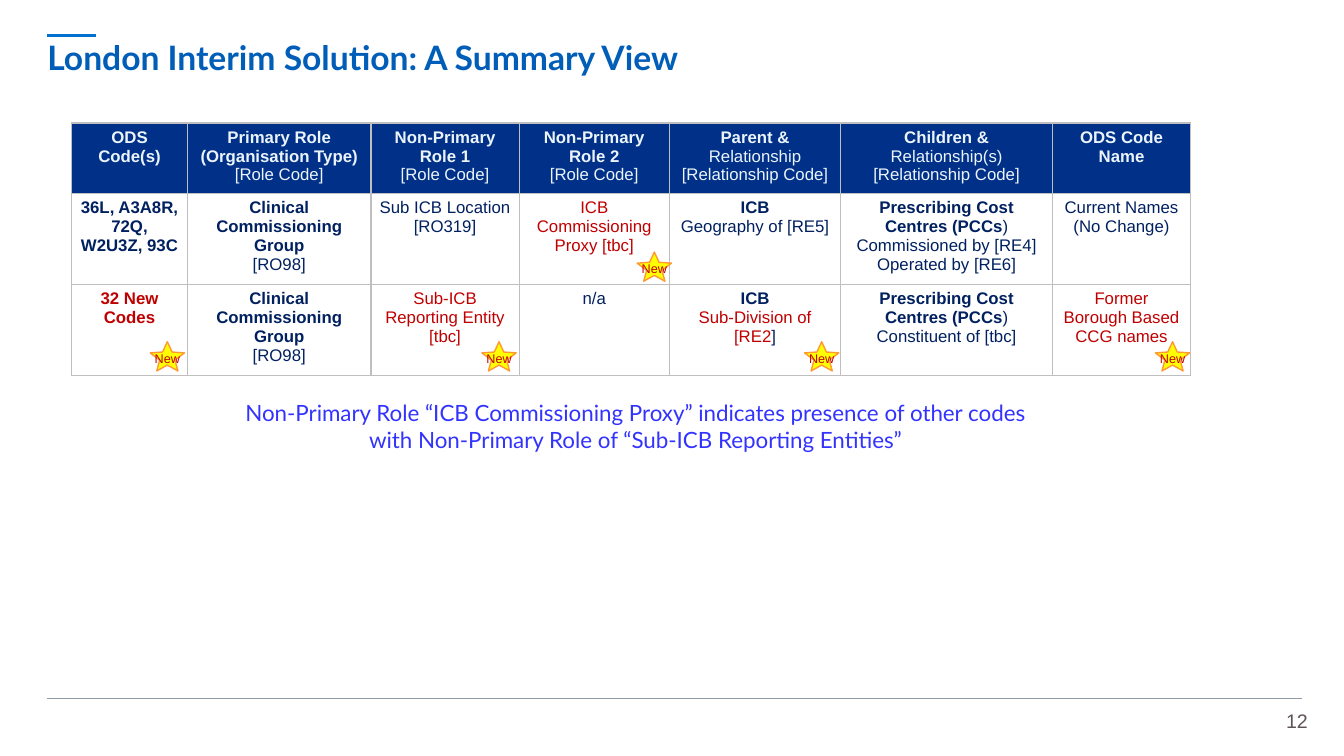
from itertools import accumulate

from lxml.etree import SubElement
from pptx import Presentation
from pptx.dml.color import RGBColor
from pptx.enum.shapes import MSO_CONNECTOR, MSO_SHAPE
from pptx.enum.text import MSO_ANCHOR, PP_ALIGN
from pptx.oxml.ns import qn
from pptx.util import Inches, Pt

WIDTH, HEIGHT = 13.33, 7.5
MARGIN = 0.47
NAVY, HEADER_TEXT, RED = "002060", "EBF4FB", "C00000"
HEADER_FILL, BODY_FILL, BORDER = "003087", "FFFFFF", "BFBFBF"

TITLE = "London Interim Solution: A Summary View"
NOTE = ("Non-Primary Role “ICB Commissioning Proxy” indicates presence of other codes "
        "with Non-Primary Role of “Sub-ICB Reporting Entities”")
PAGE_NUMBER = "12"

# A cell is a list of paragraphs, a paragraph a list of (text, format) runs.
PLAIN, BOLD = {}, {"bold": True}
ALERT, BOLD_ALERT = {"color": RED}, {"color": RED, "bold": True}
CCG = [[("Clinical Commissioning Group", BOLD)], [("[RO98]", PLAIN)]]
PCC = [("Prescribing Cost Centres (PCCs", BOLD), (")", PLAIN)]
ROLE_CODE = [("[Role Code]", PLAIN)]
RELATIONSHIP_CODE = [("[Relationship Code]", PLAIN)]
ROWS = [
    [
        [[("ODS Code(s)", BOLD)]],
        [[("Primary Role", BOLD)], [("(Organisation Type)", BOLD)], ROLE_CODE],
        [[("Non-Primary Role 1", BOLD)], ROLE_CODE],
        [[("Non-Primary Role 2", BOLD)], ROLE_CODE],
        [[("Parent & ", BOLD), ("Relationship", PLAIN)], RELATIONSHIP_CODE],
        [[("Children & ", BOLD), ("Relationship(s)", PLAIN)], RELATIONSHIP_CODE],
        [[("ODS Code Name", BOLD)]],
    ],
    [
        [[("36L, A3A8R, 72Q, W2U3Z, 93C", BOLD)]],
        CCG,
        [[("Sub ICB Location [RO319]", PLAIN)]],
        [[("ICB Commissioning Proxy [tbc]", ALERT)]],
        [[("ICB", BOLD)], [("Geography of [RE5]", PLAIN)]],
        [PCC, [("Commissioned by [RE4]", PLAIN)], [("Operated by [RE6]", PLAIN)]],
        [[("Current Names (No Change)", PLAIN)]],
    ],
    [
        [[("32 New Codes", BOLD_ALERT)]],
        CCG,
        [[("Sub-ICB Reporting Entity [tbc]", ALERT)]],
        [[("n/a", PLAIN)]],
        [[("ICB", BOLD)], [("Sub-Division of [RE2", ALERT), ("]", PLAIN)]],
        [PCC, [("Constituent of [tbc]", PLAIN)]],
        [[("Former Borough Based CCG names", ALERT)]],
    ],
]
TABLE_LEFT, TABLE_TOP = 0.71, 1.22
COLUMN_WIDTHS = [1.15, 1.82, 1.47, 1.49, 1.7, 2.1, 1.37]
ROW_HEIGHTS = [0.66, 0.85, 0.85]

# Row, column, and distance of the star's right edge from the column's right edge.
NEW_CELLS = [(1, 3, -0.02), (2, 2, 0.03), (2, 0, 0.03), (2, 4, 0.02), (2, 6, 0.01)]
STAR_WIDTH, STAR_HEIGHT = 0.34, 0.29
STAR_RISE = {1: 0.23, 2: 0.19}


def rgb(value):
    return RGBColor.from_string(value)


def place(shape, left, top, width, height):
    shape.left, shape.top = Inches(left), Inches(top)
    shape.width, shape.height = Inches(width), Inches(height)


def add_span(para, text, size=12, color=NAVY, font="Arial", bold=False):
    span = para.add_run()
    span.text = text
    span.font.size, span.font.name, span.font.bold = Pt(size), font, bold
    span.font.color.rgb = rgb(color)


def write(frame, text, align=PP_ALIGN.CENTER, anchor=MSO_ANCHOR.TOP, inset=None,
          wrap=True, **style):
    """Put one formatted paragraph into a text frame."""
    frame.word_wrap, frame.vertical_anchor = wrap, anchor
    if inset is not None:
        frame.margin_left = frame.margin_right = Inches(inset)
        frame.margin_top = frame.margin_bottom = Inches(inset)
    para = frame.paragraphs[0]
    para.alignment = align
    add_span(para, text, **style)
    return para


def add_rule(slide, left, right, top, color, weight):
    line = slide.shapes.add_connector(MSO_CONNECTOR.STRAIGHT, Inches(left), Inches(top),
                                      Inches(right), Inches(top))
    line.line.color.rgb, line.line.width = rgb(color), Pt(weight)
    SubElement(line._element.spPr, qn("a:effectLst"))


def add_borders(cell):
    properties = cell._tc.get_or_add_tcPr()
    for side in ("a:lnL", "a:lnR", "a:lnT", "a:lnB"):
        line = SubElement(properties, qn(side), w=str(Pt(1)))
        SubElement(SubElement(line, qn("a:solidFill")), qn("a:srgbClr"), val=BORDER)


def fill_cell(cell, paragraphs, fill, color, side_inset):
    cell.margin_left = cell.margin_right = Inches(side_inset)
    add_borders(cell)
    cell.fill.solid()
    cell.fill.fore_color.rgb = rgb(fill)
    frame = cell.text_frame
    for index, runs in enumerate(paragraphs):
        para = frame.add_paragraph() if index else frame.paragraphs[0]
        para.alignment = PP_ALIGN.CENTER
        for text, style in runs:
            add_span(para, text, **{"color": color, **style})


def add_role_table(slide):
    table = slide.shapes.add_table(
        len(ROWS), len(COLUMN_WIDTHS), Inches(TABLE_LEFT), Inches(TABLE_TOP),
        Inches(sum(COLUMN_WIDTHS)), Inches(sum(ROW_HEIGHTS))).table
    table.horz_banding = False
    for column, width in zip(table.columns, COLUMN_WIDTHS):
        column.width = Inches(width)
    for row, height in zip(table.rows, ROW_HEIGHTS):
        row.height = Inches(height)
    last = len(COLUMN_WIDTHS) - 1
    for r, cells in enumerate(ROWS):
        for c, paragraphs in enumerate(cells):
            if r:
                fill_cell(table.cell(r, c), paragraphs, BODY_FILL, NAVY, 0.08)
            else:
                fill_cell(table.cell(r, c), paragraphs, HEADER_FILL, HEADER_TEXT,
                          0.04 if c == last else 0.1)


def add_new_stars(slide):
    right_edges = [TABLE_LEFT + offset for offset in accumulate(COLUMN_WIDTHS)]
    bottom_edges = [TABLE_TOP + offset for offset in accumulate(ROW_HEIGHTS)]
    for row, column, gap in NEW_CELLS:
        star = slide.shapes.add_shape(MSO_SHAPE.STAR_5_POINT, 0, 0, 0, 0)
        place(star, right_edges[column] - gap - STAR_WIDTH,
              bottom_edges[row] - STAR_RISE[row], STAR_WIDTH, STAR_HEIGHT)
        star.adjustments[0] = 0.224
        star.shadow.inherit = False
        star.fill.solid()
        star.fill.fore_color.rgb = rgb("FFFF00")
        star.line.color.rgb, star.line.width = rgb("FF9933"), Pt(1)
        write(star.text_frame, "New", anchor=MSO_ANCHOR.MIDDLE, inset=0, wrap=False,
              size=9, color=RED)


def add_text(slide, text, left, top, width, height, **style):
    box = slide.shapes.add_textbox(0, 0, 0, 0)
    place(box, left, top, width, height)
    write(box.text_frame, text, **style)


def main():
    deck = Presentation()
    deck.slide_width, deck.slide_height = Inches(WIDTH), Inches(HEIGHT)
    slide = deck.slides.add_slide(deck.slide_layouts.get_by_name("Title Only"))

    add_rule(slide, MARGIN, 0.95, 0.35, "0072CE", 2)
    add_rule(slide, MARGIN, 12.91, 6.93, "919EA8", 0.5)
    title = slide.shapes.title
    place(title, MARGIN, 0.35, 12.47, 0.49)
    para = write(title.text_frame, TITLE, align=PP_ALIGN.LEFT, anchor=MSO_ANCHOR.MIDDLE,
                 inset=0, size=24, color="005EB8", font="Lato", bold=True)
    para.line_spacing = 0.9
    add_text(slide, PAGE_NUMBER, 12.63, 6.95, 0.44, 0.4, align=PP_ALIGN.RIGHT,
             anchor=MSO_ANCHOR.MIDDLE, size=14, color="5E5356")
    add_role_table(slide)
    add_new_stars(slide)
    add_text(slide, NOTE, 2.32, 3.91, 7.97, 0.64, size=16, color="3333FF", font="Lato")

    deck.save("out.pptx")


if __name__ == "__main__":
    main()
